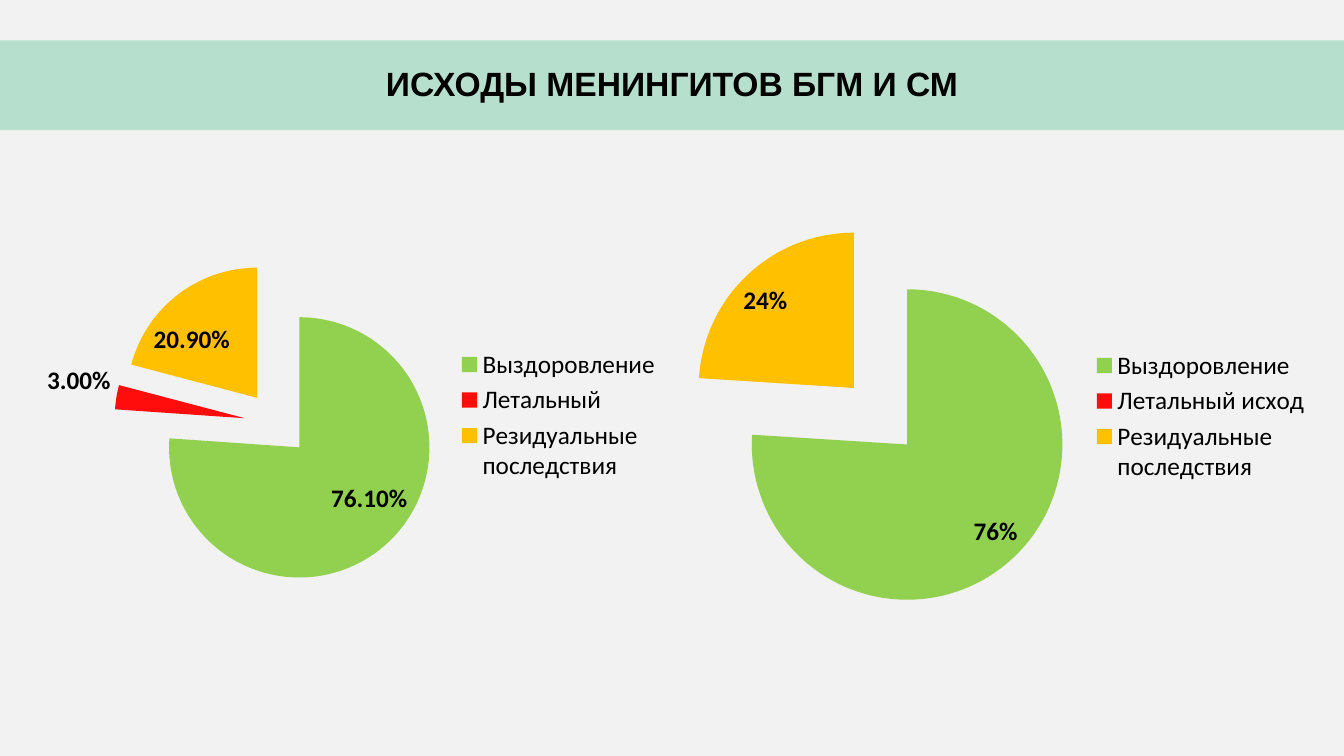
import lxml.etree
import pptx
import pptx.chart.data
import pptx.dml.color
import pptx.enum.chart
import pptx.enum.text
import pptx.oxml
import pptx.oxml.ns
import pptx.util

BACKGROUND = pptx.dml.color.RGBColor(0xF2, 0xF2, 0xF2)
MINT = pptx.dml.color.RGBColor(0xB6, 0xDF, 0xCD)
BLACK = pptx.dml.color.RGBColor(0x00, 0x00, 0x00)
GREEN = pptx.dml.color.RGBColor(0x92, 0xD0, 0x50)
RED = pptx.dml.color.RGBColor(0xFF, 0x0D, 0x0D)
AMBER = pptx.dml.color.RGBColor(0xFF, 0xC0, 0x00)
EXPLOSION = 25

# left, top, width, height in inches; name of the fatal outcome; values; format
OUTCOMES = [
    ((0.32, 1.72, 6.34, 4.8), "Летальный", (0.761, 0.03, 0.209), "0.00%"),
    ((6.67, 1.08, 6.43, 6.1), "Летальный исход", (0.76, 0, 0.24), "0%"),
]

presentation = pptx.Presentation()
presentation.slide_width = pptx.util.Inches(13.33)
presentation.slide_height = pptx.util.Inches(7.5)
slide = presentation.slides.add_slide(presentation.slide_layouts[5])
slide.background.fill.solid()
slide.background.fill.fore_color.rgb = BACKGROUND

# Title band across the full width
title = slide.shapes.title
title.left, title.top = 0, pptx.util.Inches(0.4)
title.width, title.height = presentation.slide_width, pptx.util.Inches(0.89)
title.fill.solid()
title.fill.fore_color.rgb = MINT
title.text_frame.text = "ИСХОДЫ МЕНИНГИТОВ БГМ И СМ"
title.text_frame.vertical_anchor = pptx.enum.text.MSO_ANCHOR.MIDDLE
paragraph = title.text_frame.paragraphs[0]
paragraph.alignment = pptx.enum.text.PP_ALIGN.CENTER
paragraph.line_spacing = 0.9
paragraph.font.name = "Arial"
paragraph.font.size = pptx.util.Pt(24)
paragraph.font.bold = True
paragraph.font.color.rgb = BLACK

# Exploded pies of outcomes
for box, fatal, values, number_format in OUTCOMES:
    data = pptx.chart.data.CategoryChartData(number_format=number_format)
    data.categories = ["Выздоровление", fatal, "Резидуальные последствия"]
    data.add_series("Series 1", values)
    chart = slide.shapes.add_chart(
        pptx.enum.chart.XL_CHART_TYPE.PIE,
        *[pptx.util.Inches(length) for length in box], data).chart
    chart.has_title = False
    chart.font.name = "Calibri"
    chart.font.size = pptx.util.Pt(18)
    chart.font.color.rgb = BLACK
    chart.has_legend = True
    chart.legend.position = pptx.enum.chart.XL_LEGEND_POSITION.RIGHT
    chart.legend.include_in_layout = False

    plot = chart.plots[0]
    plot.vary_by_categories = True
    series = plot.series[0]
    for index, color in enumerate((GREEN, RED, AMBER)):
        fill = series.points[index].format.fill
        fill.solid()
        fill.fore_color.rgb = color

    # Pull the slices apart
    explosion = pptx.oxml.parse_xml(
        f'<c:explosion {pptx.oxml.ns.nsdecls("c")} val="{EXPLOSION}"/>')
    series._element.find(pptx.oxml.ns.qn("c:tx")).addnext(explosion)

    # Value labels, none for an empty slice
    labels = series.data_labels
    labels.show_value = True
    labels.show_percentage = False
    labels.number_format = number_format
    labels.number_format_is_linked = False
    labels.position = pptx.enum.chart.XL_LABEL_POSITION.BEST_FIT
    labels.font.name = "Calibri"
    labels.font.size = pptx.util.Pt(18)
    labels.font.bold = True
    labels.font.color.rgb = BLACK
    labels_element = series._element.find(pptx.oxml.ns.qn("c:dLbls"))
    for index, value in enumerate(values):
        if value == 0:
            hidden = lxml.etree.Element(pptx.oxml.ns.qn("c:dLbl"))
            for tag, setting in (("c:idx", index), ("c:delete", 1)):
                lxml.etree.SubElement(hidden, pptx.oxml.ns.qn(tag), val=str(setting))
            labels_element.insert(0, hidden)

presentation.save("out.pptx")
